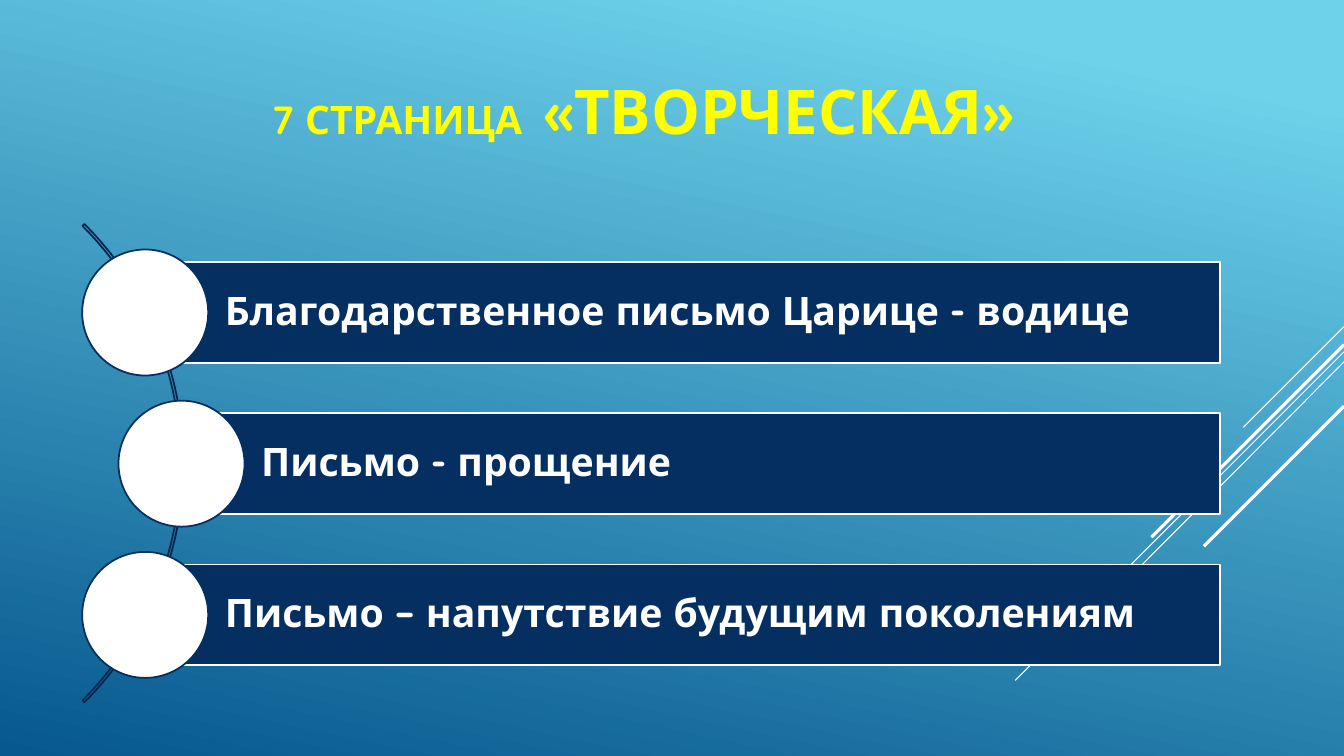
from pptx import Presentation
from pptx.dml.color import RGBColor
from pptx.enum.shapes import MSO_CONNECTOR, MSO_SHAPE as Preset
from pptx.enum.text import MSO_ANCHOR as Anchor, PP_ALIGN as Align
from pptx.util import Inches, Pt
from lxml import etree

WHITE = RGBColor(0xFF, 0xFF, 0xFF)
YELLOW = RGBColor(0xFF, 0xFF, 0x00)
NAVY = RGBColor(0x05, 0x2F, 0x61)
DARK_NAVY = RGBColor(0x04, 0x26, 0x4E)
SKY = RGBColor(0x6E, 0xD2, 0xEB)
DEEP_BLUE = RGBColor(0x06, 0x58, 0x8E)
DRAWING_NS = "http://schemas.openxmlformats.org/drawingml/2006/main"


class SlideBuilder:
    font_name = "Quicksand"
    outline = 1.25

    def __init__(self, slide):
        self.slide = slide

    def background(self, start, end, angle):
        fill = self.slide.background.fill
        fill.gradient()
        fill.gradient_angle = angle
        for stop, (color, position) in zip(fill.gradient_stops, (start, end)):
            stop.color.rgb = color
            stop.position = position

    def streak(self, x1, y1, x2, y2, width):
        streak = self.slide.shapes.add_connector(
            MSO_CONNECTOR.STRAIGHT, *map(Inches, (x1, y1, x2, y2)))
        streak.line.color.rgb = WHITE
        streak.line.width = Pt(width)
        etree.SubElement(streak._element.spPr, f"{{{DRAWING_NS}}}effectLst")

    def shape(self, preset, box, line, fill=None):
        shape = self.slide.shapes.add_shape(preset, *map(Inches, box))
        shape.shadow.inherit = False
        shape.line.color.rgb = line
        shape.line.width = Pt(self.outline)
        if fill is None:
            shape.fill.background()
        else:
            shape.fill.solid()
            shape.fill.fore_color.rgb = fill
        return shape

    def add_words(self, frame, runs, color, align):
        frame.word_wrap = True
        frame.vertical_anchor = Anchor.MIDDLE
        paragraph = frame.paragraphs[0]
        paragraph.alignment = align
        paragraph.line_spacing = 0.9
        for words, size in runs:
            run = paragraph.add_run()
            run.text = words
            run.font.name = self.font_name
            run.font.size = Pt(size)
            run.font.bold = True
            run.font.color.rgb = color

    def title(self, box, runs):
        title = self.slide.shapes.add_textbox(*map(Inches, box))
        self.add_words(title.text_frame, runs, YELLOW, Align.CENTER)

    def arc(self, box, adjustments):
        arc = self.shape(Preset.BLOCK_ARC, box, DARK_NAVY)
        for index, value in enumerate(adjustments):
            arc.adjustments[index] = value

    def item(self, left, middle, words):
        right, height, dot = 12.1, 1, 1.25
        bar = self.shape(Preset.RECTANGLE,
                         (left, middle - height / 2, right - left, height),
                         WHITE, NAVY)
        frame = bar.text_frame
        frame.margin_left = Inches(0.79)
        frame.margin_right = frame.margin_top = frame.margin_bottom = Inches(0.08)
        self.add_words(frame, [(words, 28)], WHITE, Align.LEFT)
        self.shape(Preset.OVAL, (left - dot / 2, middle - dot / 2, dot, dot),
                   NAVY, WHITE)


def main():
    deck = Presentation()
    deck.slide_width = Inches(13.33)
    deck.slide_height = Inches(7.5)
    page = SlideBuilder(deck.slides.add_slide(deck.slide_layouts[6]))

    page.background((SKY, 0.1), (DEEP_BLUE, 1), 258)
    for top, end_x, end_y, width in (
        (3.24, 12.33, 4.24, 0.75),
        (3.49, 10.07, 6.75, 0.75),
        (3.59, 11.26, 5.67, 0.75),
        (3.42, 11.42, 5.33, 2.25),
        (4.03, 11.94, 5.42, 2.25),
    ):
        page.streak(13.33, top, end_x, end_y, width)

    page.title((0.75, 0.57, 11.42, 1.13),
               [("7 СТРАНИЦА  ", 28), ("«ТВОРЧЕСКАЯ» ", 44)])
    page.arc((-4.89, 1.24, 6.71, 6.71), (189, 27, 0.004))

    letters = (
        (1.44, "Благодарственное письмо Царице - водице"),
        (1.8, "Письмо - прощение"),
        (1.44, "Письмо – напутствие будущим поколениям"),
    )
    for row, (left, words) in enumerate(letters):
        page.item(left, 3.1 + 1.5 * row, words)

    deck.save("out.pptx")


if __name__ == "__main__":
    main()
